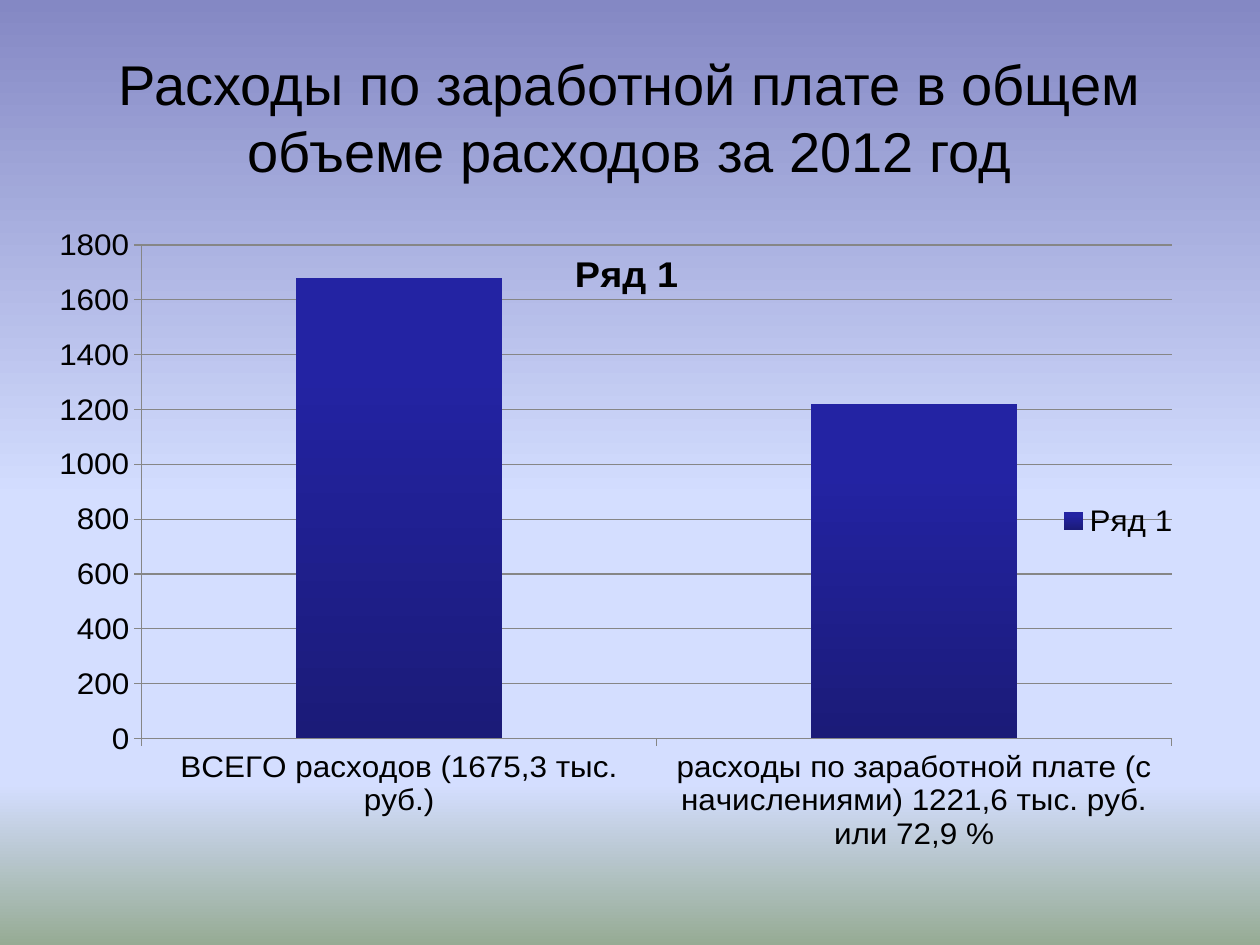
import copy
import pptx
import pptx.chart.data
import pptx.dml.color
import pptx.enum.chart
import pptx.enum.text
import pptx.oxml
import pptx.oxml.ns
import pptx.util

# Content
HEAD = "Расходы по заработной плате в общем объеме расходов за 2012 год"
NAME = "Ряд 1"
DATA = {
    "ВСЕГО расходов (1675,3 тыс. руб.)": 1680,
    "расходы по заработной плате (с начислениями) 1221,6 тыс. руб. или 72,9 %": 1220,
}

# Theme: colours, type sizes, and gradient stops from top to bottom
THEME = {
    "font": "Arial", "ink": "000000", "line": "868686",
    "head": 32, "title": 21.6, "text": 18,
    "back": [(0, "8488C4"), (0.53, "D4DEFF"), (0.83, "D4DEFF"), (1, "96AB94")],
    "bar": [(0, "2323A3"), (0.2, "2323A3"), (1, "1B1B78")],
}

# Places as shares of the slide: left, top, width, height
WIDE, HIGH = 10, 7.5
SPOT = {"head": (0.05, 0.04, 0.9, 0.167), "chart": (0.047, 0.24, 0.9, 0.66)}
PLOT = {"x": 0.072, "y": 0.031, "w": 0.909, "h": 0.839}


def place(key):
    sides = (WIDE, HIGH, WIDE, HIGH)
    return [pptx.util.Inches(a * b) for a, b in zip(SPOT[key], sides)]


def tint(code):
    return pptx.dml.color.RGBColor.from_string(code)


def apply(item, values):
    for key, value in values.items():
        setattr(item, key, value)


def style(font, size, bold=False):
    apply(font, {"name": THEME["font"], "size": pptx.util.Pt(size), "bold": bold})
    font.color.rgb = tint(THEME["ink"])


def blend(fill, root, stops):
    fill.gradient()
    fill.gradient_angle = 270
    group = root.find(".//" + pptx.oxml.ns.qn("a:gsLst"))
    while len(group) < len(stops):
        group.append(copy.deepcopy(group[0]))
    for stop, (spot, code) in zip(fill.gradient_stops, stops):
        stop.position = spot
        stop.color.rgb = tint(code)


def fix_plot(chart):
    area = chart.plots[0]._element.getparent()
    old = area.find(pptx.oxml.ns.qn("c:layout"))
    if old is not None:
        area.remove(old)
    modes = '<c:xMode val="edge"/><c:yMode val="edge"/>'
    sizes = "".join(f'<c:{k} val="{v}"/>' for k, v in PLOT.items())
    area.insert(0, pptx.oxml.parse_xml(
        f'<c:layout {pptx.oxml.ns.nsdecls("c")}><c:manualLayout>'
        f'<c:layoutTarget val="inner"/>{modes}{sizes}'
        '</c:manualLayout></c:layout>'))


deck = pptx.Presentation()
apply(deck, {"slide_width": pptx.util.Inches(WIDE),
             "slide_height": pptx.util.Inches(HIGH)})
slide = deck.slides.add_slide(deck.slide_layouts[6])
blend(slide.background.fill, slide._element, THEME["back"])

# Heading
frame = slide.shapes.add_textbox(*place("head")).text_frame
apply(frame, {"word_wrap": True, "text": HEAD,
              "vertical_anchor": pptx.enum.text.MSO_ANCHOR.MIDDLE})
line = frame.paragraphs[0]
line.alignment = pptx.enum.text.PP_ALIGN.CENTER
style(line.runs[0].font, THEME["head"])

# Chart
data = pptx.chart.data.CategoryChartData()
data.categories = list(DATA)
data.add_series(NAME, list(DATA.values()))
kind = pptx.enum.chart.XL_CHART_TYPE.COLUMN_STACKED
chart = slide.shapes.add_chart(kind, *place("chart"), data).chart
style(chart.font, THEME["text"])
apply(chart, {"has_title": True, "has_legend": True})
fix_plot(chart)

# Chart title and legend lie over the plot
chart.chart_title.text_frame.text = NAME
style(chart.chart_title.text_frame.paragraphs[0].runs[0].font, THEME["title"], True)
chart.chart_title.include_in_layout = True
apply(chart.legend, {"position": pptx.enum.chart.XL_LEGEND_POSITION.RIGHT,
                     "include_in_layout": False})

# Bars
plot = chart.plots[0]
apply(plot, {"gap_width": 150, "overlap": 100, "vary_by_categories": False})
bars = plot.series[0]
blend(bars.format.fill, bars._element, THEME["bar"])

# Axes
apply(chart.value_axis, {"minimum_scale": 0, "maximum_scale": 1800,
                         "major_unit": 200, "has_major_gridlines": True})
for axis in (chart.category_axis, chart.value_axis):
    axis.major_tick_mark = pptx.enum.chart.XL_TICK_MARK.OUTSIDE
for part in (chart.category_axis, chart.value_axis, chart.value_axis.major_gridlines):
    part.format.line.color.rgb = tint(THEME["line"])
    part.format.line.width = pptx.util.Pt(0.75)

deck.save("out.pptx")
